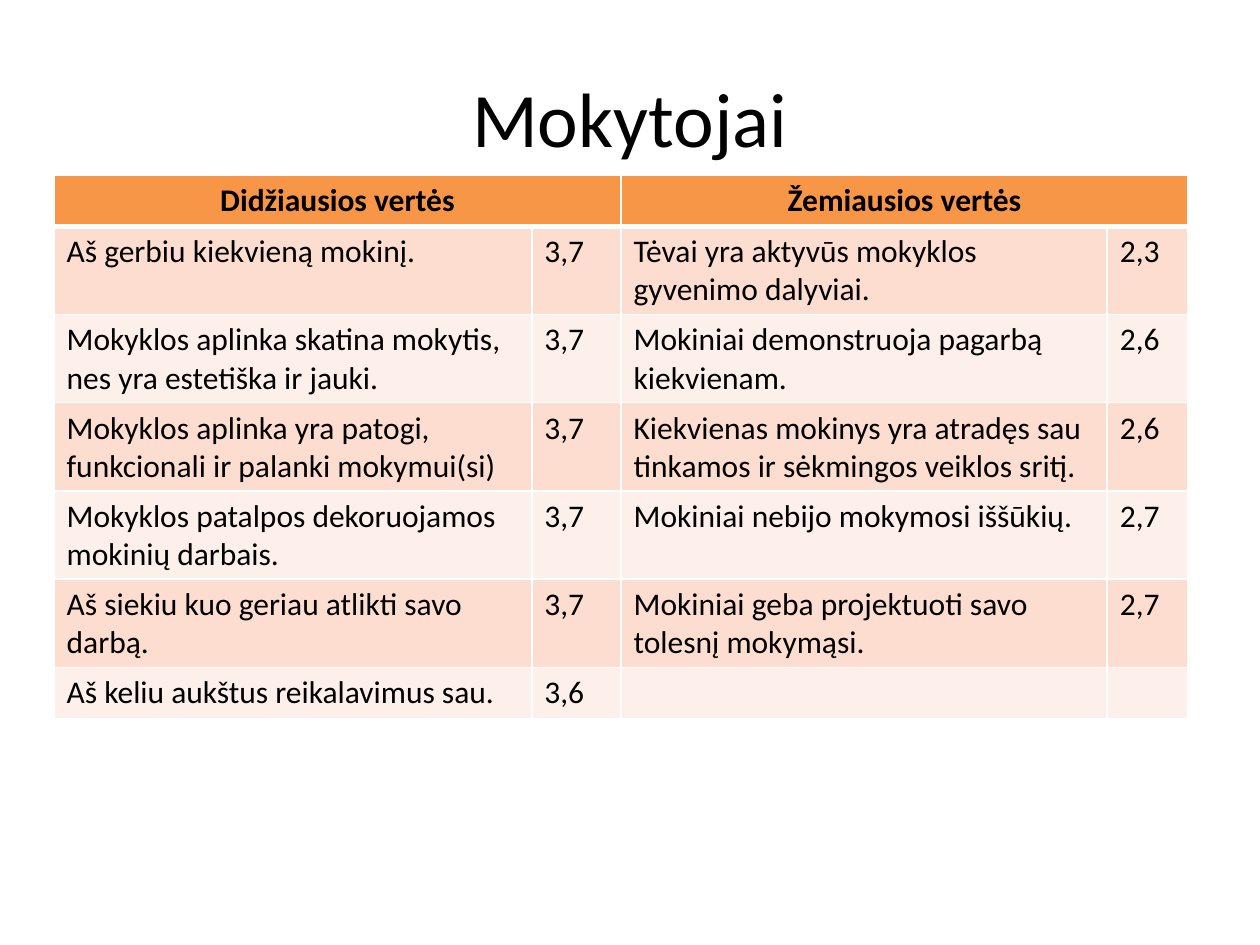
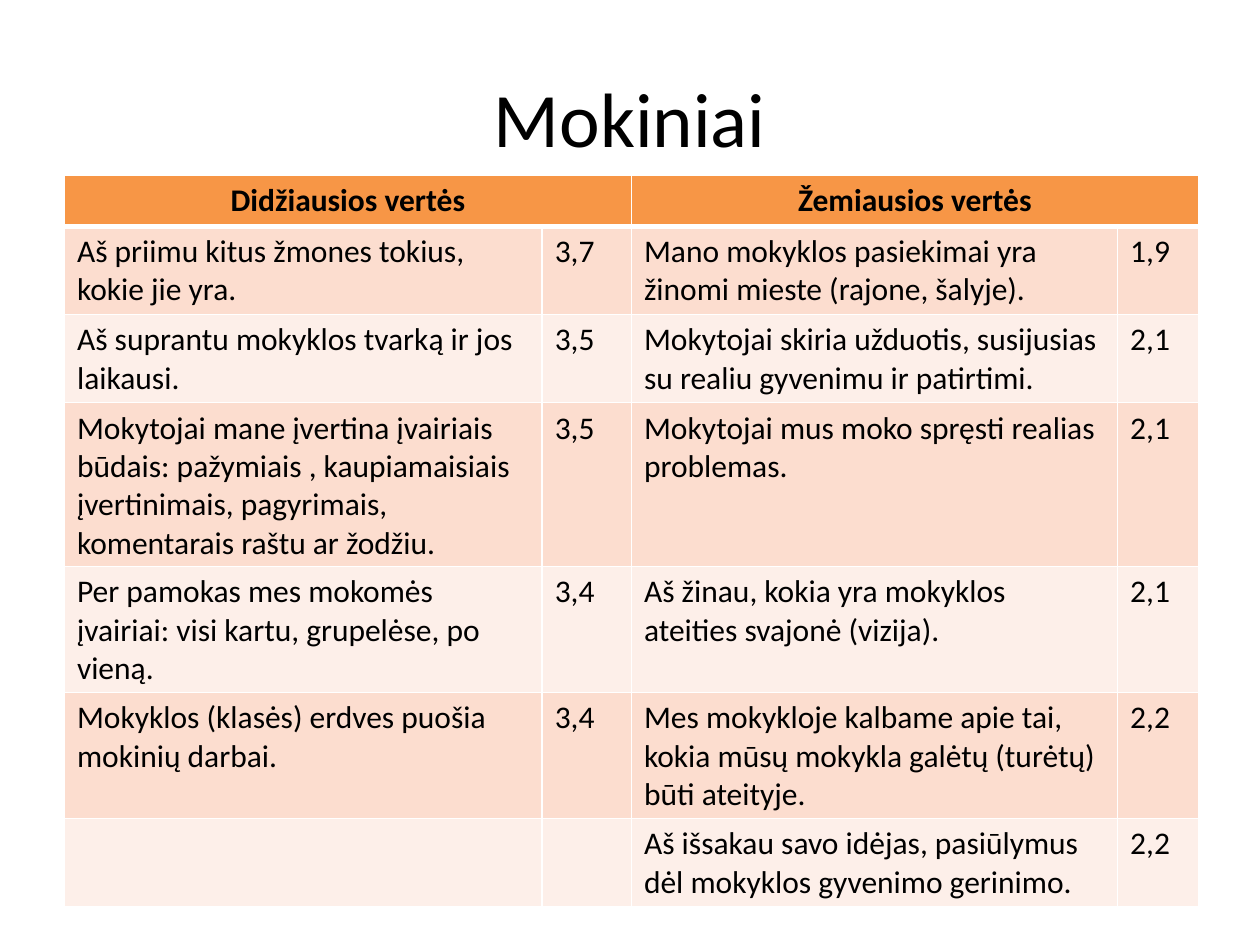
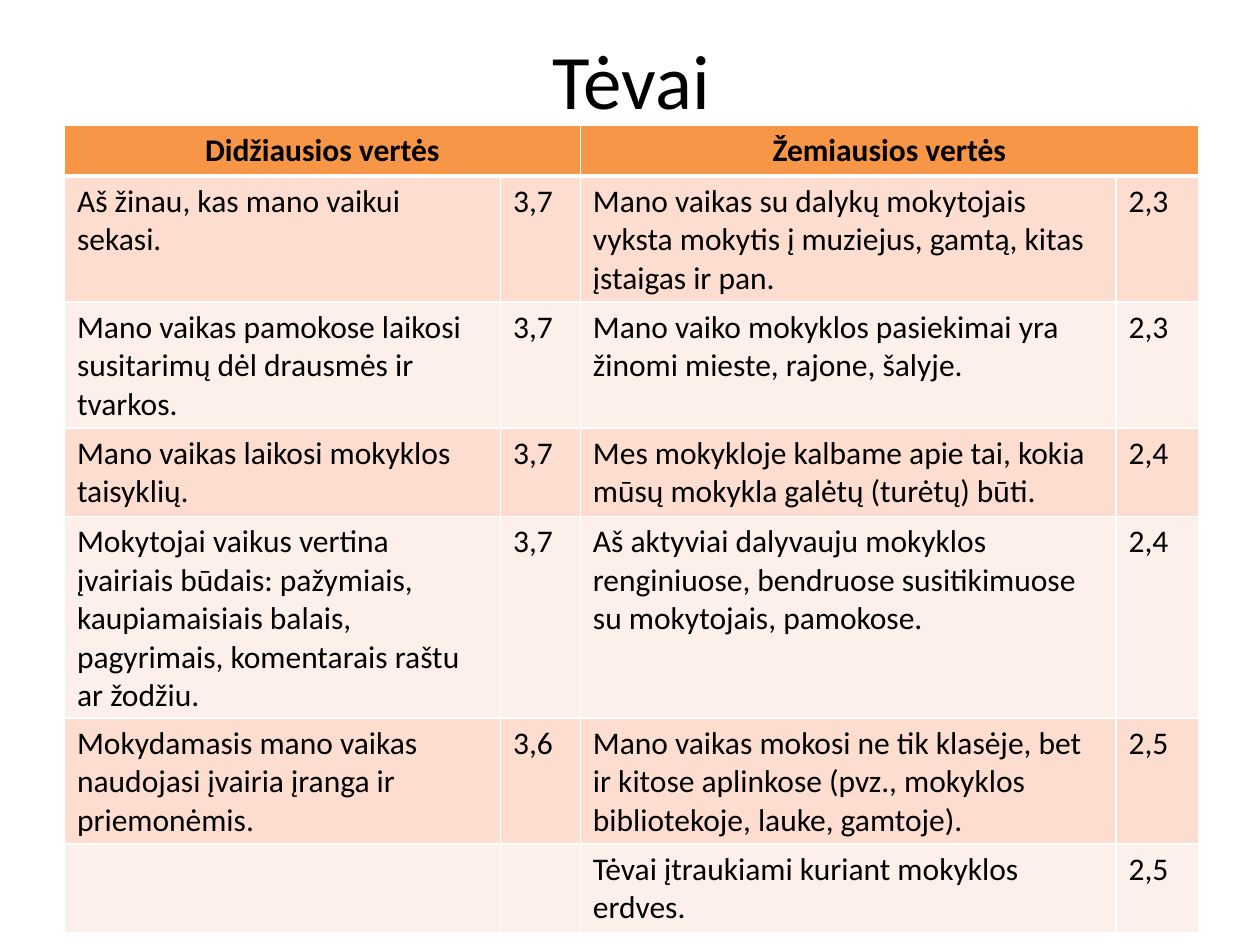
import pptx
import pptx.dml.color
import pptx.enum.text
import pptx.oxml.ns
import pptx.util
from lxml import etree

Cm = pptx.util.Cm
Pt = pptx.util.Pt
ALIGN = pptx.enum.text.PP_ALIGN

COLORS = {
    "text": "000000",
    "rule": "FFFFFF",
    "header": "F79646",
    "odd_row": "FCDDCF",
    "even_row": "FDEFE9",
}
FONT = "Calibri"
CONTENT_WIDTH = 22.86
ROW_HEIGHT = 1.03
HEADINGS = ("Didžiausios vertės", "Žemiausios vertės")
EVEN_HALVES = (9.63, 1.8, 9.8, 1.63)
WIDE_RIGHT_HALF = (8.79, 1.61, 10.8, 1.66)

TEACHERS = [
    ("Aš gerbiu kiekvieną mokinį.", "3,7",
     "Tėvai yra aktyvūs mokyklos gyvenimo dalyviai.", "2,3"),
    ("Mokyklos aplinka skatina mokytis, nes yra estetiška ir jauki.", "3,7",
     "Mokiniai demonstruoja pagarbą kiekvienam.", "2,6"),
    ("Mokyklos aplinka yra patogi, funkcionali ir palanki mokymui(si)", "3,7",
     "Kiekvienas mokinys yra atradęs sau tinkamos ir sėkmingos veiklos sritį.", "2,6"),
    ("Mokyklos patalpos dekoruojamos mokinių darbais.", "3,7",
     "Mokiniai nebijo mokymosi iššūkių.", "2,7"),
    ("Aš siekiu kuo geriau atlikti savo darbą.", "3,7",
     "Mokiniai geba projektuoti savo tolesnį mokymąsi.", "2,7"),
    ("Aš keliu aukštus reikalavimus sau.", "3,6", "", ""),
]
PUPILS = [
    ("Aš priimu kitus žmones tokius, kokie jie yra.", "3,7",
     "Mano mokyklos pasiekimai yra žinomi mieste (rajone, šalyje).", "1,9"),
    ("Aš suprantu mokyklos tvarką ir jos laikausi.", "3,5",
     "Mokytojai skiria užduotis, susijusias su realiu gyvenimu ir patirtimi.", "2,1"),
    ("Mokytojai mane įvertina įvairiais būdais: pažymiais , kaupiamaisiais "
     "įvertinimais, pagyrimais, komentarais raštu ar žodžiu.", "3,5",
     "Mokytojai mus moko spręsti realias problemas.", "2,1"),
    ("Per pamokas mes mokomės įvairiai: visi kartu, grupelėse, po vieną.", "3,4",
     "Aš žinau, kokia yra mokyklos ateities svajonė (vizija).", "2,1"),
    ("Mokyklos (klasės) erdves puošia mokinių darbai.", "3,4",
     "Mes mokykloje kalbame apie tai, kokia mūsų mokykla galėtų (turėtų) "
     "būti ateityje.", "2,2"),
    ("", "", "Aš išsakau savo idėjas, pasiūlymus dėl mokyklos gyvenimo gerinimo.", "2,2"),
]
PARENTS = [
    ("Aš žinau, kas mano vaikui sekasi.", "3,7",
     "Mano vaikas su dalykų mokytojais vyksta mokytis į muziejus, gamtą, "
     "kitas įstaigas ir pan.", "2,3"),
    ("Mano vaikas pamokose laikosi susitarimų dėl drausmės ir tvarkos.", "3,7",
     "Mano vaiko mokyklos pasiekimai yra žinomi mieste, rajone, šalyje.", "2,3"),
    ("Mano vaikas laikosi mokyklos taisyklių.", "3,7",
     "Mes mokykloje kalbame apie tai, kokia mūsų mokykla galėtų (turėtų) būti.", "2,4"),
    ("Mokytojai vaikus vertina įvairiais būdais: pažymiais, kaupiamaisiais "
     "balais, pagyrimais, komentarais raštu ar žodžiu.", "3,7",
     "Aš aktyviai dalyvauju mokyklos renginiuose, bendruose susitikimuose "
     "su mokytojais, pamokose.", "2,4"),
    ("Mokydamasis mano vaikas naudojasi įvairia įranga ir priemonėmis.", "3,6",
     "Mano vaikas mokosi ne tik klasėje, bet ir kitose aplinkose (pvz., "
     "mokyklos bibliotekoje, lauke, gamtoje).", "2,5"),
    ("", "", "Tėvai įtraukiami kuriant mokyklos erdves.", "2,5"),
]


def rgb(name):
    return pptx.dml.color.RGBColor.from_string(COLORS[name])


def write_text(frame, text, *, size=18, bold=False, align=ALIGN.LEFT):
    paragraph = frame.paragraphs[0]
    paragraph.alignment = align
    run = paragraph.add_run()
    run.text = text
    run.font.name = FONT
    run.font.size = Pt(size)
    run.font.bold = bold
    run.font.color.rgb = rgb("text")


def add_title(slide, text, left, top):
    title = slide.shapes.add_textbox(Cm(left), Cm(top), Cm(CONTENT_WIDTH), Cm(3.18))
    title.text_frame.word_wrap = True
    title.text_frame.vertical_anchor = pptx.enum.text.MSO_ANCHOR.MIDDLE
    write_text(title.text_frame, text, size=44, align=ALIGN.CENTER)


def style_cell(cell, fill, top=1, bottom=1):
    """Rule the cell, widths in points, then fill it: the schema wants that order."""
    properties = cell._tc.get_or_add_tcPr()
    for side, width in (("L", 1), ("R", 1), ("T", top), ("B", bottom)):
        line = etree.SubElement(properties, pptx.oxml.ns.qn(f"a:ln{side}"), w=str(Pt(width)))
        solid = etree.SubElement(line, pptx.oxml.ns.qn("a:solidFill"))
        etree.SubElement(solid, pptx.oxml.ns.qn("a:srgbClr"), val=COLORS["rule"])
    cell.fill.solid()
    cell.fill.fore_color.rgb = rgb(fill)


def add_ratings(slide, ratings, left, top, widths):
    """Add the table of highest and lowest rated statements."""
    row_count = len(ratings) + 1
    table = slide.shapes.add_table(
        row_count, len(widths), Cm(left), Cm(top),
        Cm(CONTENT_WIDTH), Cm(ROW_HEIGHT * row_count)).table
    for column, width in zip(table.columns, widths):
        column.width = Cm(width)

    for index in range(len(widths)):
        style_cell(table.cell(0, index), "header", bottom=3)
    for half, heading in enumerate(HEADINGS):
        header = table.cell(0, 2 * half)
        header.merge(table.cell(0, 2 * half + 1))
        write_text(header.text_frame, heading, bold=True, align=ALIGN.CENTER)

    for row, entries in enumerate(ratings, start=1):
        for column, entry in enumerate(entries):
            cell = table.cell(row, column)
            style_cell(cell, "odd_row" if row % 2 else "even_row", top=3 if row == 1 else 1)
            if entry:
                write_text(cell.text_frame, entry)


def main():
    deck = pptx.Presentation()
    deck.slide_width, deck.slide_height = Cm(25.4), Cm(19.05)
    groups = [
        ("Mokytojai", (1.27, 0.76), TEACHERS, (1.09, 3.53), EVEN_HALVES),
        ("Mokiniai", (1.27, 0.76), PUPILS, (1.3, 3.53), EVEN_HALVES),
        ("Tėvai", (1.3, 0), PARENTS, (1.3, 2.52), WIDE_RIGHT_HALF),
    ]
    for group, title_at, ratings, table_at, widths in groups:
        slide = deck.slides.add_slide(deck.slide_layouts[6])
        add_title(slide, group, *title_at)
        add_ratings(slide, ratings, *table_at, widths)
    deck.save("out.pptx")


if __name__ == "__main__":
    main()
